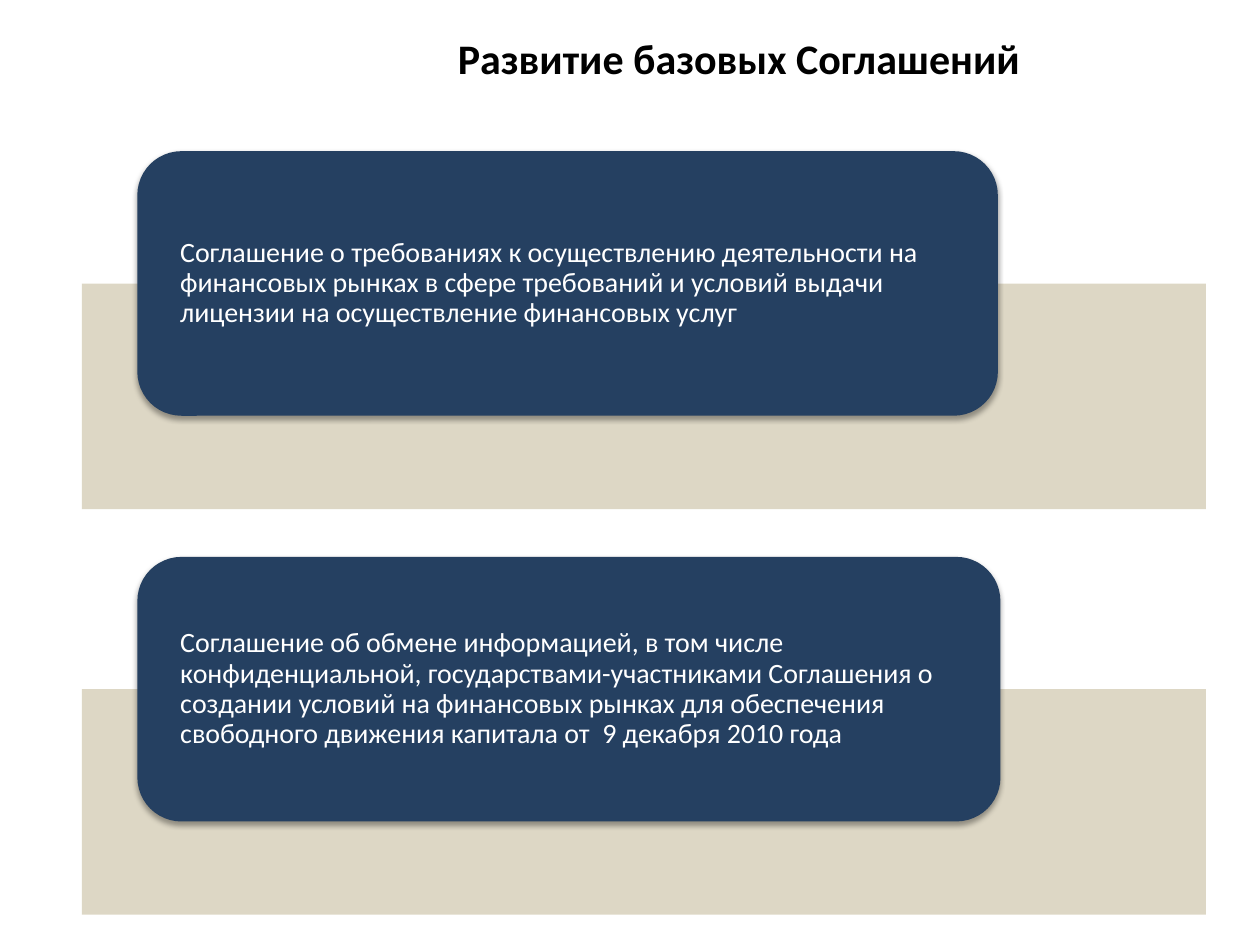
"""Builds a slide with two agreement cards laid over tinted bands."""
from dataclasses import dataclass

from lxml import etree
from pptx import Presentation
from pptx.dml.color import RGBColor
from pptx.enum.shapes import MSO_SHAPE
from pptx.enum.text import MSO_ANCHOR, PP_ALIGN
from pptx.oxml.ns import qn
from pptx.shapes.autoshape import Shape
from pptx.slide import Slide
from pptx.text.text import _Paragraph
from pptx.util import Inches, Pt

RECTANGLE = MSO_SHAPE.RECTANGLE
ROUNDED_RECTANGLE = MSO_SHAPE.ROUNDED_RECTANGLE
MIDDLE = MSO_ANCHOR.MIDDLE
CENTER = PP_ALIGN.CENTER

COLORS = {"title": "000000", "band": "BCB08D", "card": "254061",
          "card_text": "FFFFFF", "shadow": "000000"}
FONT = "Calibri"
FIRST_TOP = 1.2
ROW_STEP = 3.22
BAND_OFFSET = 1.05
CARD_LEFT = 1.09
CARD_HEIGHT = 2.1
TEXT_INSET = 0.1


@dataclass(frozen=True)
class Agreement:
    """Wording and card width of one agreement."""
    text: str
    width: float


AGREEMENTS = (
    Agreement("Соглашение о требованиях к осуществлению деятельности на финансовых "
              "рынках в сфере требований и условий выдачи лицензии на осуществление "
              "финансовых услуг", 6.83),
    Agreement("Соглашение об обмене информацией, в том числе конфиденциальной, "
              "государствами-участниками Соглашения о создании условий на финансовых "
              "рынках для обеспечения свободного движения капитала от  9 декабря "
              "2010 года", 6.85),
)


def add_block(slide: Slide, kind: MSO_SHAPE, left: float, top: float,
              width: float, height: float, color: str) -> Shape:
    """Add a borderless filled shape."""
    shape = slide.shapes.add_shape(kind, Inches(left), Inches(top),
                                   Inches(width), Inches(height))
    shape.fill.solid()
    shape.fill.fore_color.rgb = RGBColor.from_string(COLORS[color])
    shape.line.fill.background()
    shape.shadow.inherit = False
    return shape


def set_alpha(color_element: etree._Element, percent: int) -> None:
    """Set the opacity of a colour element."""
    etree.SubElement(color_element, qn("a:alpha"), val=str(percent * 1000))


def add_shadow(shape: Shape) -> None:
    """Give a shape a soft shadow that falls straight down."""
    effects = shape.element.spPr.find(qn("a:effectLst"))
    shadow = etree.SubElement(effects, qn("a:outerShdw"), blurRad=str(Pt(3.1)),
                              dist=str(Pt(1.8)), dir=str(90 * 60000), rotWithShape="0")
    color = etree.SubElement(shadow, qn("a:srgbClr"), val=COLORS["shadow"])
    set_alpha(color, 35)


def add_text(slide: Slide, text: str, left: float, top: float, width: float,
             height: float, size: int, color: str, bold: bool = False) -> tuple[Shape, _Paragraph]:
    """Add a wrapping text box and return it with its paragraph."""
    box = slide.shapes.add_textbox(Inches(left), Inches(top), Inches(width), Inches(height))
    box.text_frame.word_wrap = True
    paragraph = box.text_frame.paragraphs[0]
    run = paragraph.add_run()
    run.text = text
    run.font.name = FONT
    run.font.size = Pt(size)
    run.font.bold = bold
    run.font.color.rgb = RGBColor.from_string(COLORS[color])
    return box, paragraph


def add_agreement(slide: Slide, agreement: Agreement, top: float) -> None:
    """Draw a band, the card over it and the card wording."""
    band = add_block(slide, RECTANGLE, 0.65, top + BAND_OFFSET, 8.92, 1.79, "band")
    set_alpha(band.element.spPr.find(qn("a:solidFill"))[0], 50)
    card = add_block(slide, ROUNDED_RECTANGLE, CARD_LEFT, top,
                     agreement.width, CARD_HEIGHT, "card")
    add_shadow(card)
    box, paragraph = add_text(slide, agreement.text, CARD_LEFT + TEXT_INSET, top + TEXT_INSET,
                              agreement.width - 2 * TEXT_INSET,
                              CARD_HEIGHT - 2 * TEXT_INSET, 16, "card_text")
    frame = box.text_frame
    frame.vertical_anchor = MIDDLE
    frame.margin_left = frame.margin_right = Inches(0.24)
    frame.margin_top = frame.margin_bottom = Inches(0)
    paragraph.line_spacing = 0.9
    paragraph.space_after = Pt(5.6)


def main() -> None:
    """Build and save the presentation."""
    presentation = Presentation()
    presentation.slide_width = Inches(10)
    presentation.slide_height = Inches(7.5)
    slide = presentation.slides.add_slide(presentation.slide_layouts[6])
    _, title = add_text(slide, "Развитие базовых Соглашений", 2.51, 0.21, 6.71, 0.5,
                        24, "title", bold=True)
    title.alignment = CENTER
    for row, agreement in enumerate(AGREEMENTS):
        add_agreement(slide, agreement, FIRST_TOP + row * ROW_STEP)
    presentation.save("out.pptx")


if __name__ == "__main__":
    main()
